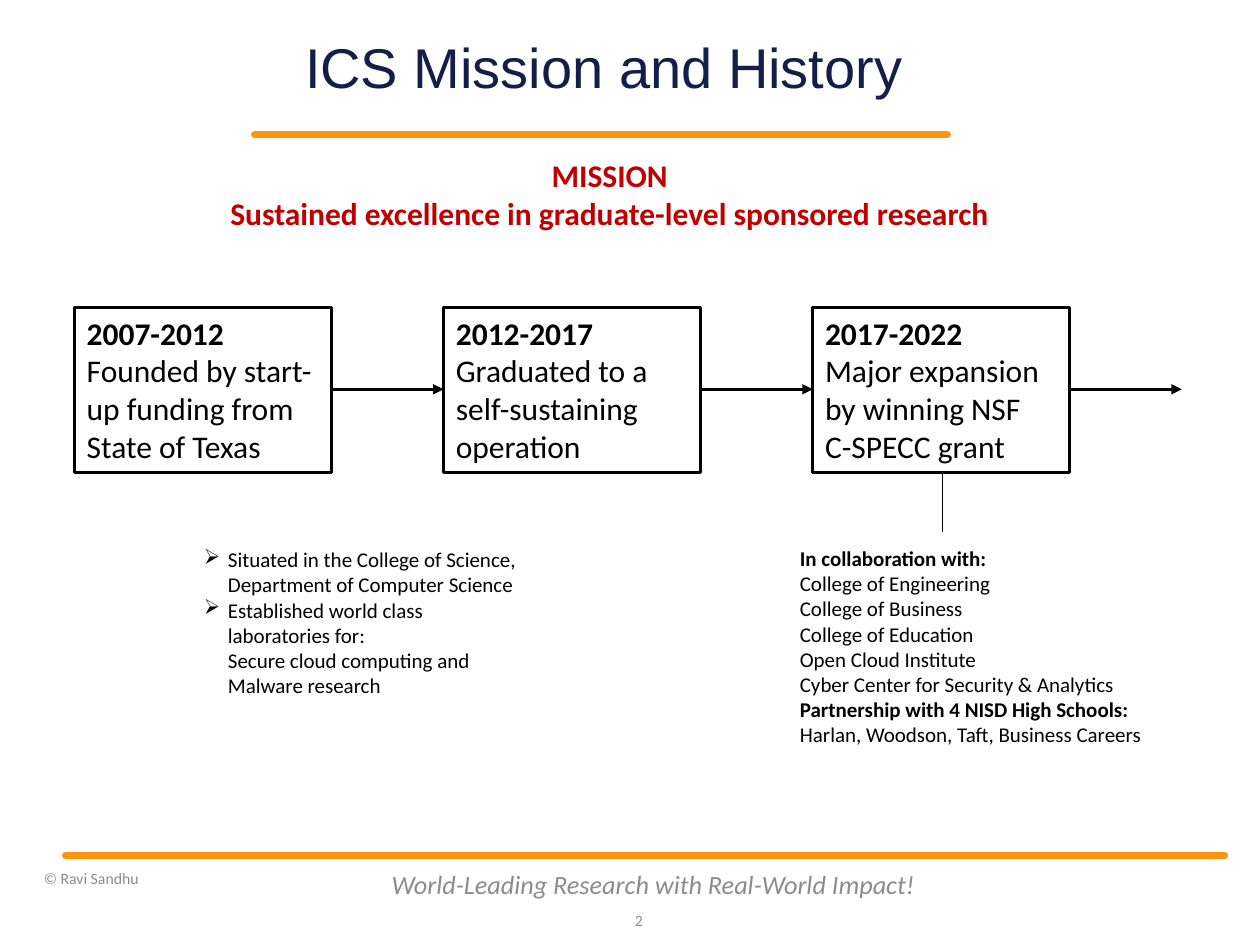
import copy

import pptx
import pptx.dml.color
import pptx.enum.shapes
import pptx.enum.text
import pptx.oxml.ns
import pptx.util
from pptx.util import Inches

ALIGN = pptx.enum.text.PP_ALIGN
ANCHOR = pptx.enum.text.MSO_ANCHOR
qn = pptx.oxml.ns.qn

THEME = {
    "title_font": "Arial", "body_font": "Calibri",
    "navy": "131F49", "orange": "FF950E", "red": "C00000",
    "gray": "8C8C8C", "black": "000000",
    "title": 32, "large": 18, "slogan": 15, "detail": 12, "small": 9,
    "rule": 4, "outline": 1.5, "stem": 1,
}

TITLE = "ICS Mission and History"
MISSION = ["MISSION", "Sustained excellence in graduate-level sponsored research"]
PHASES = [
    ("2007-2012", "Founded by start-up funding from State of Texas"),
    ("2012-2017", "Graduated to a self-sustaining operation"),
    ("2017-2022", "Major expansion by winning NSF \vC-SPECC grant"),
]
FOUNDING = [
    "Situated in the College of Science, Department of Computer Science",
    "Established world class laboratories for:\vSecure cloud computing and\vMalware research",
]
PARTNERS = [
    "In collaboration with:",
    "College of Engineering",
    "College of Business",
    "College of Education",
    "Open Cloud Institute",
    "Cyber Center for Security & Analytics",
    "Partnership with 4 NISD High Schools:",
    "Harlan, Woodson, Taft, Business Careers",
]
COPYRIGHT = "© Ravi Sandhu"
SLOGAN = "World-Leading Research with Real-World Impact!"
PAGE_NUMBER = "2"

RULES = [(2.02, 1.07, 7.52), (0.52, 6.79, 9.72)]  # left, y, right
PHASE_LEFT, PHASE_TOP, PHASE_WIDTH, PHASE_HEIGHT = 0.59, 2.44, 2.04, 1.31
PHASE_GAP = 0.89
ARROW_Y = 3.09


def color(name):
    return pptx.dml.color.RGBColor.from_string(THEME[name])


def write(frame, lines, size, ink="black", bold=(), italic=False,
          align=ALIGN.LEFT, font="body_font"):
    """Fill a frame with one paragraph per line; bold holds line indexes."""
    for index, line in enumerate(lines):
        para = frame.paragraphs[0] if index == 0 else frame.add_paragraph()
        para.text = line
        para.alignment = align
        for span in para.runs:
            span.font.name = THEME[font]
            span.font.size = pptx.util.Pt(THEME[size])
            span.font.color.rgb = color(ink)
            span.font.bold = index in bold
            span.font.italic = italic
        for line_break in para._p.findall(qn("a:br")):
            line_break.append(copy.deepcopy(para.runs[0]._r.rPr))


def add_text(page, place, lines, size, anchor=ANCHOR.TOP, wrap=True, **style):
    box = page.shapes.add_textbox(*map(Inches, place))
    frame = box.text_frame
    frame.word_wrap = wrap
    frame.vertical_anchor = anchor
    write(frame, lines, size, **style)
    return frame


def add_line(page, start, end, ink, width, arrow=False, rounded=False):
    line = page.shapes.add_connector(
        pptx.enum.shapes.MSO_CONNECTOR.STRAIGHT, *map(Inches, start + end))
    line.line.color.rgb = color(ink)
    line.line.width = pptx.util.Pt(THEME[width])
    properties = line._element.spPr
    outline = properties.find(qn("a:ln"))
    if rounded:
        outline.set("cap", "rnd")
    if arrow:
        outline.append(outline.makeelement(qn("a:tailEnd"), {"type": "triangle"}))
    properties.append(properties.makeelement(qn("a:effectLst"), {}))


def add_bullets(frame, indent):
    for para in frame.paragraphs:
        properties = para._p.get_or_add_pPr()
        properties.set("marL", str(Inches(indent)))
        properties.set("indent", str(-Inches(indent)))
        properties.append(properties.makeelement(qn("a:buChar"), {"char": "➢"}))


def add_title(page):
    title = page.shapes.title
    title.left, title.top, title.width, title.height = map(
        Inches, (2.17, 0.3, 5.25, 0.51))
    frame = title.text_frame
    frame.margin_left = frame.margin_right = frame.margin_top = frame.margin_bottom = 0
    frame.vertical_anchor = ANCHOR.MIDDLE
    write(frame, [TITLE], "title", ink="navy", align=ALIGN.CENTER, font="title_font")
    frame.paragraphs[0].line_spacing = 0.9


def add_phase(page, left, lines):
    box = page.shapes.add_shape(
        pptx.enum.shapes.MSO_SHAPE.RECTANGLE,
        *map(Inches, (left, PHASE_TOP, PHASE_WIDTH, PHASE_HEIGHT)))
    box.shadow.inherit = False
    box.fill.background()
    box.line.color.rgb = color("black")
    box.line.width = pptx.util.Pt(THEME["outline"])
    box.text_frame.word_wrap = True
    box.text_frame.vertical_anchor = ANCHOR.TOP
    write(box.text_frame, lines, "large", bold=(0,))
    right = left + PHASE_WIDTH
    add_line(page, (right, ARROW_Y), (right + PHASE_GAP, ARROW_Y),
             "black", "outline", arrow=True)


def main():
    deck = pptx.Presentation()
    deck.slide_width, deck.slide_height = Inches(10), Inches(7.5)
    page = deck.slides.add_slide(deck.slide_layouts.get_by_name("Title Only"))

    for left, y, right in RULES:
        add_line(page, (left, y), (right, y), "orange", "rule", rounded=True)
    add_title(page)
    add_text(page, (1.66, 1.19, 6.36, 0.71), MISSION, "large", wrap=False,
             ink="red", bold=(0, 1), align=ALIGN.CENTER)

    for index, phase in enumerate(PHASES):
        add_phase(page, PHASE_LEFT + index * (PHASE_WIDTH + PHASE_GAP), phase)
    stem_x, phase_bottom = 7.48, PHASE_TOP + PHASE_HEIGHT
    add_line(page, (stem_x, phase_bottom), (stem_x, 4.22), "black", "stem")

    founding = add_text(page, (1.52, 4.29, 2.71, 1.51), FOUNDING, "detail")
    add_bullets(founding, 0.19)
    add_text(page, (6.25, 4.28, 2.93, 1.72), PARTNERS, "detail", bold=(0, 6))

    footer = {"anchor": ANCHOR.MIDDLE, "ink": "gray"}
    add_text(page, (0.25, 6.79, 2.75, 0.36), [COPYRIGHT], "small", **footer)
    add_text(page, (3, 6.82, 4.37, 0.4), [SLOGAN], "slogan",
             italic=True, align=ALIGN.CENTER, **footer)
    add_text(page, (4.8, 7.1, 0.4, 0.4), [PAGE_NUMBER], "small",
             align=ALIGN.RIGHT, **footer)

    deck.save("out.pptx")


if __name__ == "__main__":
    main()
